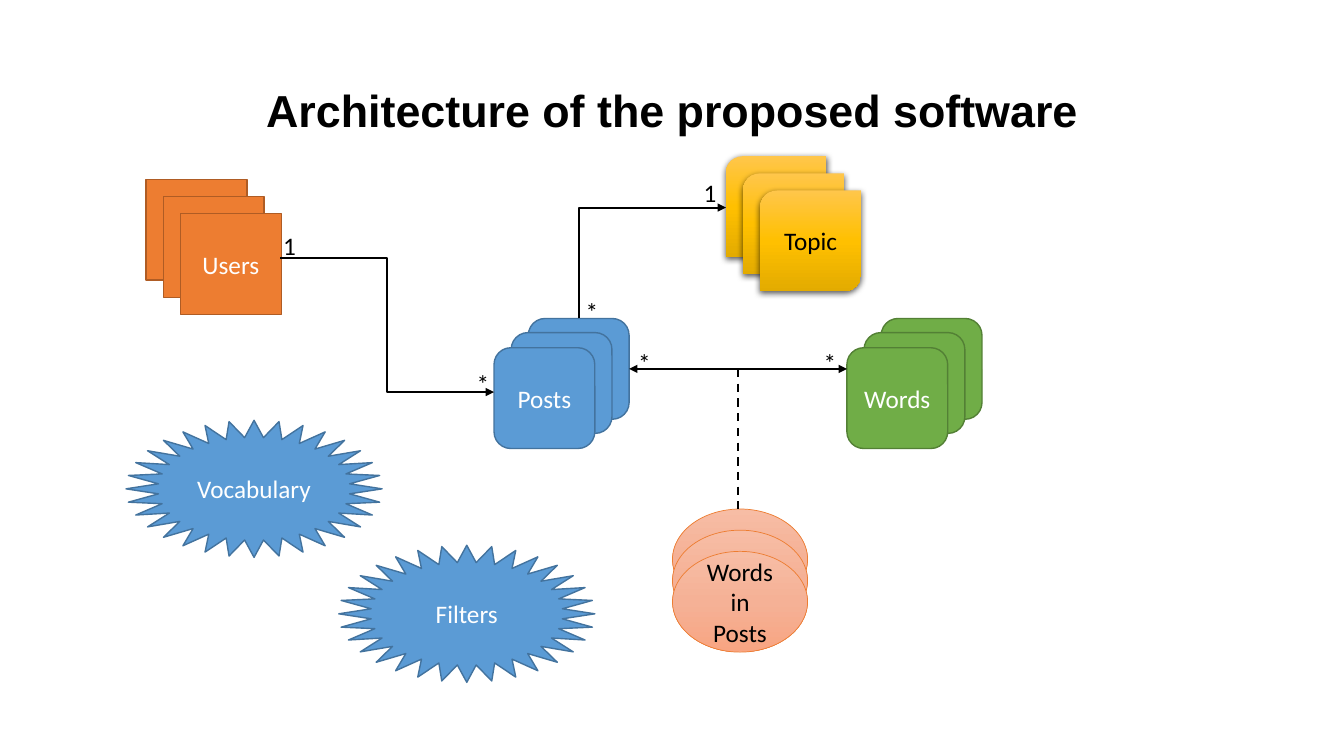
from copy import deepcopy
from dataclasses import dataclass

from lxml import etree
from pptx import Presentation, util as u
from pptx.dml.color import RGBColor
from pptx.enum import dml, shapes, text
from pptx.oxml import ns

PX = 9144
Kind = shapes.MSO_SHAPE
Wire = shapes.MSO_CONNECTOR

INK = {
    "black": "000000",
    "white": "FFFFFF",
    "orange": "ED7D31",
    "rust": "AF5C24",
    "blue": "5B9BD5",
    "navy": "43739E",
    "green": "70AD47",
    "moss": "538035",
    "peach": "F7BDA5",
    "coral": "F5B196",
    "salmon": "F8A582",
    "sun": "FFC64B",
    "gold": "FFC000",
    "amber": "E3AB00",
}


@dataclass
class Stack:
    label: str
    kind: int
    x: int
    y: int
    fills: tuple[str, ...]
    edge: str | None
    font: str = "white"
    w: int = 100
    h: int = 100
    dx: int = 0
    dy: int = 0
    count: int = 3
    width: float = 1
    shade: bool = False


@dataclass
class Link:
    x1: int
    y1: int
    x2: int
    y2: int
    head: bool = False
    tail: bool = False
    bent: bool = False
    dash: bool = False


@dataclass
class Mark:
    label: str
    x: int
    y: int


ROSE = ("peach", "coral", "salmon")
GOLD = ("sun", "gold", "amber")

STACKS = [
    Stack("Users", Kind.RECTANGLE, 145, 178, ("orange",), "rust", dx=34, dy=34),
    Stack("Posts", Kind.ROUNDED_RECTANGLE, 524, 316, ("blue",), "navy", dx=-34, dy=29),
    Stack("Words", Kind.ROUNDED_RECTANGLE, 874, 316, ("green",), "moss", dx=-34, dy=29),
    Stack("Words in Posts", Kind.OVAL, 667, 505, ROSE, "orange", "black",
          w=134, dy=42, width=0.5),
    Stack("Topic", Kind.ROUND_2_DIAG_RECTANGLE, 720, 155, GOLD, None, "black",
          dx=34, dy=34, shade=True),
    Stack("Vocabulary", Kind.STAR_32_POINT, 125, 417, ("blue",), "navy",
          w=254, h=136, count=1),
    Stack("Filters", Kind.STAR_32_POINT, 336, 541, ("blue",), "navy",
          w=254, h=136, count=1),
]

LINKS = [
    Link(278, 256, 490, 389, tail=True, bent=True),
    Link(624, 366, 840, 366, head=True, tail=True),
    Link(732, 366, 732, 505, dash=True),
]

MARKS = [
    Mark("1", 271, 224),
    Mark("*", 463, 360),
    Mark("*", 571, 289),
    Mark("*", 807, 340),
    Mark("*", 623, 340),
    Mark("1", 688, 171),
]


def tint(name: str) -> RGBColor:
    return RGBColor.from_string(INK[name])


def write(shape, label: str, color: str, size: int = 18, face: str = "Calibri",
          bold: bool = False, align=text.PP_ALIGN.CENTER) -> None:
    frame = shape.text_frame
    frame.text = label
    line = frame.paragraphs[0]
    line.alignment = align
    font = line.runs[0].font
    font.size, font.name, font.bold = u.Pt(size), face, bold
    font.color.rgb = tint(color)


def blend(shape, names: tuple[str, ...]) -> None:
    shape.fill.gradient()
    shape.fill.gradient_angle = 270
    stops = shape._element.spPr.find(".//" + ns.qn("a:gsLst"))
    stops.append(deepcopy(stops[-1]))
    for i, (stop, name) in enumerate(zip(shape.fill.gradient_stops, names)):
        stop.position = i / 2
        stop.color.rgb = tint(name)


def shade(shape) -> None:
    effects = shape._element.spPr.find(ns.qn("a:effectLst"))
    cast = etree.SubElement(effects, ns.qn("a:outerShdw"), blurRad=str(u.Pt(4.5)),
                            dist=str(u.Pt(1.5)), dir="5400000", algn="ctr",
                            rotWithShape="0")
    color = etree.SubElement(cast, ns.qn("a:srgbClr"), val=INK["black"])
    etree.SubElement(color, ns.qn("a:alpha"), val="63000")


def pile(slide, item: Stack) -> None:
    for i in range(item.count):
        x, y = item.x + item.dx * i // 2, item.y + item.dy * i // 2
        card = slide.shapes.add_shape(item.kind, x * PX, y * PX, item.w * PX, item.h * PX)
        card.shadow.inherit = False
        if len(item.fills) > 1:
            blend(card, item.fills)
        else:
            card.fill.solid()
            card.fill.fore_color.rgb = tint(item.fills[0])
        if item.edge:
            card.line.color.rgb = tint(item.edge)
            card.line.width = u.Pt(item.width)
        else:
            card.line.fill.background()
        if item.shade:
            shade(card)
    card.text_frame.word_wrap = True
    card.text_frame.vertical_anchor = text.MSO_ANCHOR.MIDDLE
    write(card, item.label, item.font)


def join(slide, item: Link):
    kind = Wire.ELBOW if item.bent else Wire.STRAIGHT
    wire = slide.shapes.add_connector(kind, item.x1 * PX, item.y1 * PX,
                                      item.x2 * PX, item.y2 * PX)
    wire.line.color.rgb = tint("black")
    wire.line.width = u.Pt(1.5)
    if item.dash:
        wire.line.dash_style = dml.MSO_LINE.DASH
    stroke = wire.line._get_or_add_ln()
    for tag, shown in (("a:headEnd", item.head), ("a:tailEnd", item.tail)):
        if shown:
            etree.SubElement(stroke, ns.qn(tag), type="triangle")
    etree.SubElement(wire._element.spPr, ns.qn("a:effectLst"))
    return wire


def turn(slide) -> None:
    wire = join(slide, Link(702, 334, 592, 188, tail=True, bent=True))
    form = wire._element.spPr
    form.find(ns.qn("a:xfrm")).set("rot", "5400000")
    form.find(ns.qn("a:prstGeom")).set("prst", "bentConnector2")


def note(slide, item: Mark) -> None:
    box = slide.shapes.add_textbox(item.x * PX, item.y * PX, 33 * PX, 40 * PX)
    box.text_frame.word_wrap = False
    write(box, item.label, "black", align=text.PP_ALIGN.LEFT)


def head(slide) -> None:
    box = slide.shapes.add_textbox(92 * PX, 40 * PX, 1150 * PX, 145 * PX)
    box.text_frame.word_wrap = True
    box.text_frame.vertical_anchor = text.MSO_ANCHOR.MIDDLE
    write(box, "Architecture of the proposed software", "black", 32, "Arial", True)
    box.text_frame.paragraphs[0].line_spacing = 0.9


def main() -> None:
    deck = Presentation()
    deck.slide_width, deck.slide_height = 1333 * PX, 750 * PX
    slide = deck.slides.add_slide(deck.slide_layouts[6])
    head(slide)
    for item in STACKS:
        pile(slide, item)
    for item in LINKS:
        join(slide, item)
    turn(slide)
    for item in MARKS:
        note(slide, item)
    deck.save("out.pptx")


if __name__ == "__main__":
    main()
